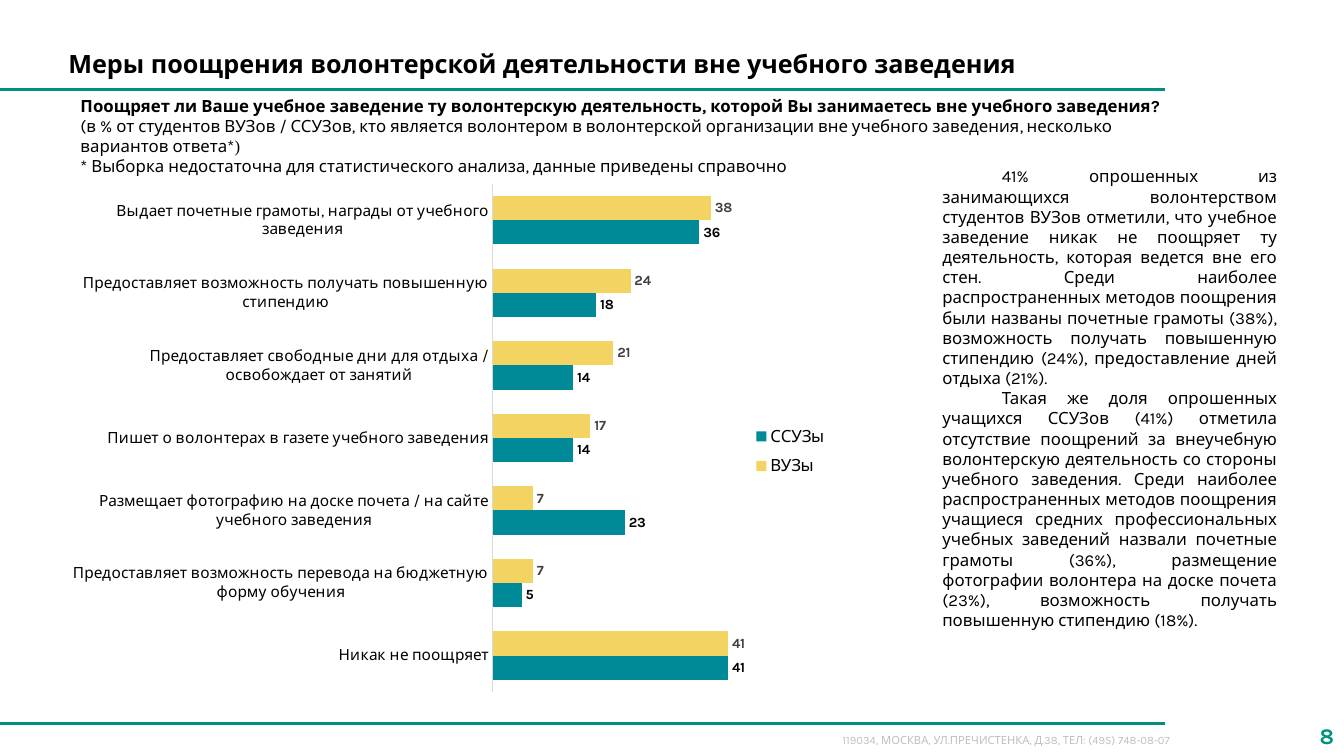
from dataclasses import dataclass
from typing import NamedTuple

from lxml import etree
from pptx import Presentation
from pptx.chart.data import CategoryChartData
from pptx.dml.color import RGBColor
from pptx.enum.chart import XL_CHART_TYPE, XL_LABEL_POSITION, XL_LEGEND_POSITION, XL_TICK_MARK
from pptx.enum.shapes import MSO_CONNECTOR
from pptx.enum.text import MSO_ANCHOR, MSO_AUTO_SIZE, PP_ALIGN
from pptx.oxml.ns import qn
from pptx.util import Inches, Pt

BAR = XL_CHART_TYPE.BAR_CLUSTERED
LEGEND_RIGHT = XL_LEGEND_POSITION.RIGHT
OUTSIDE_END = XL_LABEL_POSITION.OUTSIDE_END
NO_TICK = XL_TICK_MARK.NONE
STRAIGHT = MSO_CONNECTOR.STRAIGHT
TOP, MIDDLE = MSO_ANCHOR.TOP, MSO_ANCHOR.MIDDLE
GROW, FIXED = MSO_AUTO_SIZE.SHAPE_TO_FIT_TEXT, MSO_AUTO_SIZE.NONE
LEFT, RIGHT, JUSTIFY = PP_ALIGN.LEFT, PP_ALIGN.RIGHT, PP_ALIGN.JUSTIFY


@dataclass(frozen=True)
class Theme:
    font: str = "Karla"
    serif: str = "Times New Roman"
    black: str = "000000"
    rule: str = "008F7D"
    page_number: str = "00927B"
    muted: str = "BFBFBF"
    axis: str = "D9D9D9"
    label: str = "404040"
    universities: str = "F3D463"
    colleges: str = "008A98"
    title_size: float = 18
    number_size: float = 16
    body_size: float = 12
    category_size: float = 11
    label_size: float = 10
    footer_size: float = 8


class Box(NamedTuple):
    """Columns and rows of a grid with 10 cells to the inch."""
    left: float
    top: float
    width: float
    height: float

    def lengths(self):
        return [Inches(cells / 10) for cells in self]


THEME = Theme()
PAGE = Box(0, 0, 133.33, 75)
RULE_WIDTH = 115.6

TITLE = "Меры поощрения волонтерской деятельности вне учебного заведения"
ADDRESS = "119034, МОСКВА, УЛ.ПРЕЧИСТЕНКА, Д.38, ТЕЛ: (495) 748-08-07"
QUESTION = [
    [("Поощряет ли Ваше учебное заведение ту волонтерскую деятельность, которой "
      "Вы занимаетесь вне учебного заведения?", {"bold": True})],
    [("(в % от студентов ВУЗов / ССУЗов, кто является волонтером в волонтерской "
      "организации вне учебного заведения, несколько вариантов ответа*", {}),
     (")", {"name": THEME.serif})],
    [("* Выборка недостаточна для статистического анализа, данные приведены справочно", {})],
]
FINDINGS = [
    [("41% опрошенных из занимающихся волонтерством студентов ВУЗов отметили, что "
      "учебное заведение никак не поощряет ту деятельность, которая ведется вне его "
      "стен. Среди наиболее распространенных методов поощрения были названы почетные "
      "грамоты (38%), возможность получать повышенную стипендию (24%), "
      "предоставление дней отдыха (21%).", {})],
    [("Такая же доля опрошенных учащихся ССУЗов (41%) отметила отсутствие поощрений "
      "за внеучебную волонтерскую деятельность со стороны учебного заведения. Среди "
      "наиболее распространенных методов поощрения учащиеся средних профессиональных "
      "учебных заведений назвали почетные грамоты (36%), размещение фотографии "
      "волонтера на доске почета (23%), возможность получать повышенную стипендию "
      "(18%).", {})],
]
ANSWERS = [
    ("Выдает почетные грамоты, награды от учебного заведения", 38, 36),
    ("Предоставляет возможность получать повышенную стипендию", 24, 18),
    ("Предоставляет свободные дни для отдыха / освобождает от занятий", 21, 14),
    ("Пишет о волонтерах в газете учебного заведения", 17, 14),
    ("Размещает фотографию на доске почета / на сайте учебного заведения", 7, 23),
    ("Предоставляет возможность перевода на бюджетную форму обучения", 7, 5),
    ("Никак не поощряет", 41, 41),
]


def set_font(font, size, color=THEME.black, **values):
    font.size = Pt(size)
    font.color.rgb = RGBColor.from_string(color)
    for name, value in {"name": THEME.font, "bold": False, **values}.items():
        setattr(font, name, value)


def add_text(slide, box, paras, size, color=THEME.black, bold=False,
             align=LEFT, anchor=TOP, fit=FIXED, indent=0):
    """Write paragraphs, each a list of (text, font values), into a text box."""
    frame = slide.shapes.add_textbox(*box.lengths()).text_frame
    for name, value in {"word_wrap": True, "auto_size": fit, "vertical_anchor": anchor}.items():
        setattr(frame, name, value)
    for index, runs in enumerate(paras):
        para = frame.add_paragraph() if index else frame.paragraphs[0]
        para.alignment = align
        if indent:
            properties = para._p.get_or_add_pPr()
            properties.set("marL", "0")
            properties.set("indent", str(Inches(indent)))
        for text, values in runs:
            span = para.add_run()
            span.text = text
            set_font(span.font, size, color, **{"bold": bold, **values})


def add_rule(slide, top):
    left, y, width, _ = Box(PAGE.left, top, RULE_WIDTH, 0).lengths()
    rule = slide.shapes.add_connector(STRAIGHT, left, y, left + width, y)
    rule.line.color.rgb = RGBColor.from_string(THEME.rule)
    rule.line.width = Pt(2)
    etree.SubElement(rule._element.spPr, qn("a:effectLst"))


def add_header(slide, box):
    title_box = Box(box.left + 5.8, box.top + 4.3, 113.5, 4)
    add_text(slide, title_box, [[(TITLE, {})]], THEME.title_size, bold=True)
    add_rule(slide, box.top + box.height)


def add_footer(slide, box):
    add_rule(slide, box.top)
    add_text(slide, Box(box.left + 82.6, box.top + 0.5, 38.4, 2.4), [[(ADDRESS, {})]],
             THEME.footer_size, THEME.muted, fit=GROW)
    add_text(slide, Box(box.left + box.width - 6.9, box.top - 0.8, 6.9, 4), [[("8", {})]],
             THEME.number_size, THEME.page_number, bold=True, align=RIGHT, anchor=MIDDLE)


def set_layout(element, successors, inner=False, **shares):
    """Fix the place of a chart part by shares of the chart's size."""
    for old in element.findall(qn("c:layout")):
        element.remove(old)
    layout = etree.Element(qn("c:layout"))
    manual = etree.SubElement(layout, qn("c:manualLayout"))
    if inner:
        etree.SubElement(manual, qn("c:layoutTarget"), val="inner")
    for mode in ("xMode", "yMode"):
        etree.SubElement(manual, qn(f"c:{mode}"), val="edge")
    for name, share in shares.items():
        etree.SubElement(manual, qn(f"c:{name}"), val=str(share))
    element.insert_element_before(layout, *successors) if successors else element.insert(0, layout)


def add_answers_chart(slide, box):
    data = CategoryChartData(number_format="#,##0")
    labels, universities, colleges = zip(*ANSWERS)
    data.categories = labels
    data.add_series("ВУЗы", universities)
    data.add_series("ССУЗы", colleges)
    chart = slide.shapes.add_chart(BAR, *box.lengths(), data).chart
    set_font(chart.font, THEME.label_size, name=THEME.serif)
    chart.has_title = False

    categories = chart.category_axis
    for name, value in {"reverse_order": True, "major_tick_mark": NO_TICK,
                        "minor_tick_mark": NO_TICK, "has_major_gridlines": False}.items():
        setattr(categories, name, value)
    set_font(categories.tick_labels.font, THEME.category_size)
    categories.format.line.color.rgb = RGBColor.from_string(THEME.axis)
    categories.format.line.width = Pt(0.75)
    for name, value in {"visible": False, "has_major_gridlines": False,
                        "minimum_scale": 0, "maximum_scale": 45}.items():
        setattr(chart.value_axis, name, value)

    plot = chart.plots[0]
    for name, value in {"gap_width": 100, "overlap": 0, "vary_by_categories": False}.items():
        setattr(plot, name, value)
    styles = [(THEME.universities, THEME.label), (THEME.colleges, THEME.black)]
    for series, (fill, label_color) in zip(plot.series, styles):
        series.format.fill.solid()
        series.format.fill.fore_color.rgb = RGBColor.from_string(fill)
        set_font(series.data_labels.font, THEME.label_size, label_color, bold=True)
        for name, value in {"show_value": True, "position": OUTSIDE_END,
                            "number_format": "#,##0",
                            "number_format_is_linked": False}.items():
            setattr(series.data_labels, name, value)

    chart.has_legend = True
    chart.legend.position = LEGEND_RIGHT
    chart.legend.include_in_layout = False
    set_font(chart.legend.font, THEME.body_size)
    set_layout(chart.legend._element, ("c:overlay", "c:spPr", "c:txPr"),
               x=0.85, y=0.46, w=0.14, h=0.13)
    set_layout(plot._element.getparent(), (), inner=True, x=0.54, y=0.02, w=0.33, h=0.96)


def build_survey_slide(slide, box):
    add_header(slide, Box(box.left, box.top, box.width, 8.9))
    add_answers_chart(slide, Box(box.left + 7, box.top + 17.2, 77.6, 52.5))
    add_text(slide, Box(box.left + 7, box.top + 9, 109.3, 7.1), QUESTION,
             THEME.body_size, fit=GROW)
    add_text(slide, Box(box.left + 92.5, box.top + 16, 35.2, 41.4), FINDINGS,
             THEME.body_size, align=JUSTIFY, fit=GROW, indent=0.59)
    add_footer(slide, Box(box.left, box.top + 71.8, box.width, 3.2))


def main():
    deck = Presentation()
    _, _, deck.slide_width, deck.slide_height = PAGE.lengths()
    build_survey_slide(deck.slides.add_slide(deck.slide_layouts[6]), PAGE)
    deck.save("out.pptx")


if __name__ == "__main__":
    main()
